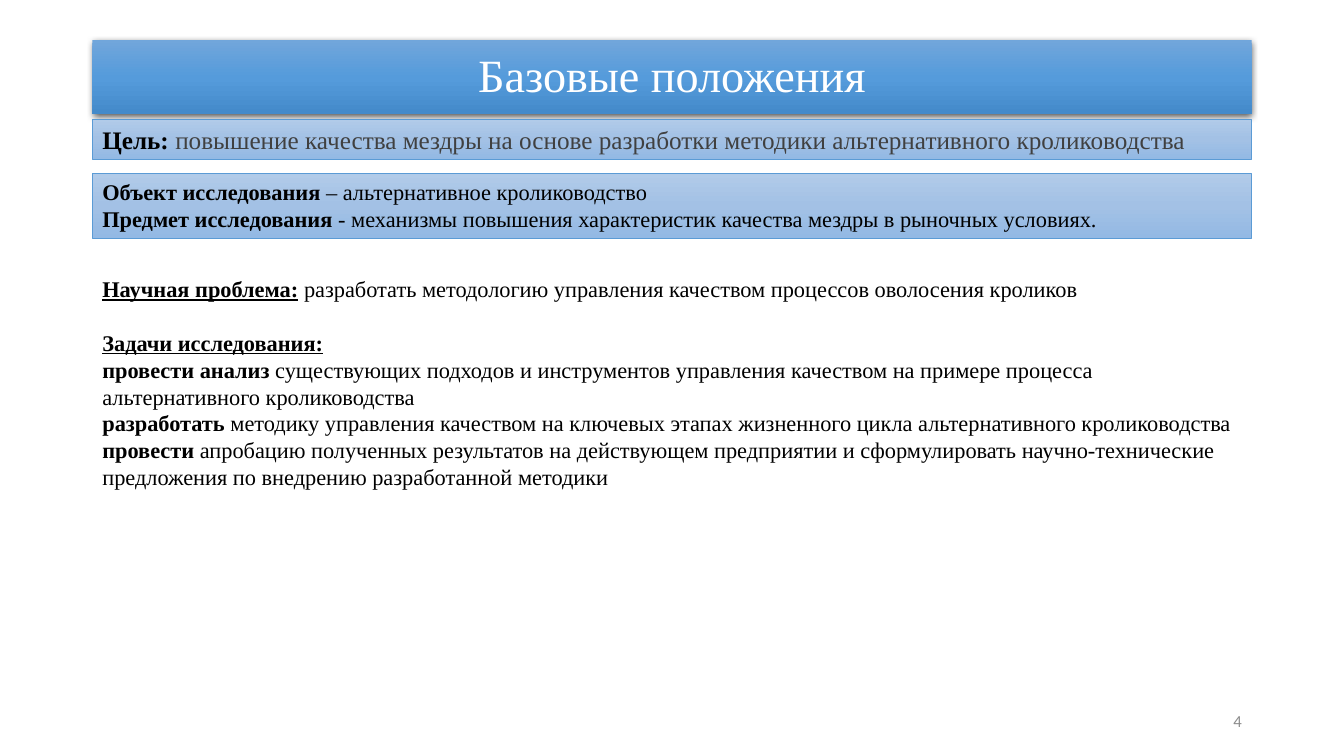
from lxml import etree
from pptx import Presentation
from pptx.dml.color import RGBColor
from pptx.enum.shapes import MSO_SHAPE
from pptx.enum.text import MSO_ANCHOR, MSO_AUTO_SIZE, PP_ALIGN
from pptx.oxml import parse_xml
from pptx.oxml.ns import qn
from pptx.util import Cm, Pt

RECT = MSO_SHAPE.RECTANGLE
TOP, MID = MSO_ANCHOR.TOP, MSO_ANCHOR.MIDDLE
GROW, FIXED = MSO_AUTO_SIZE.SHAPE_TO_FIT_TEXT, MSO_AUTO_SIZE.NONE
LEFT, RIGHT = PP_ALIGN.LEFT, PP_ALIGN.RIGHT
MIDDLE, JUST = PP_ALIGN.CENTER, PP_ALIGN.JUSTIFY

COLORS = {"black": "000000", "dark": "404040", "gray": "8C8C8C",
          "white": "FFFFFF", "line": "5B9BD5"}
PALE = ["B1CBE9", "A3C1E5", "93B9E4"]
DEEP = ["71A6DB", "559BDB", "448ACA"]
SERIF = "Times New Roman"
X, W = Cm(2.33), Cm(29.21)


def write(shape, paras, size=16, font=SERIF, color="black", anchor=TOP,
          auto=GROW, space=None):
    """Each paragraph is (align, gap before, runs); a run is (text, style, color)."""
    frame = shape.text_frame
    frame.word_wrap = True
    frame.auto_size = auto
    frame.vertical_anchor = anchor
    for i, (align, gap, runs) in enumerate(paras):
        para = frame.paragraphs[0] if i == 0 else frame.add_paragraph()
        para.alignment = align
        para.space_before = Pt(gap)
        para.line_spacing = space
        for text, style, *tint in runs:
            run = para.add_run()
            run.text = text
            run.font.name = font
            run.font.size = Pt(size)
            run.font.bold = "b" in style
            run.font.underline = "u" in style
            run.font.color.rgb = RGBColor.from_string(COLORS[tint[0] if tint else color])


def shade(shape, tones):
    """Fill from top to bottom with evenly spaced tones."""
    shape.fill.gradient()
    shape.fill.gradient_angle = 270
    stops = shape.element.spPr.find(".//" + qn("a:gsLst"))
    for stop in list(stops):
        stops.remove(stop)
    for i, tone in enumerate(tones):
        stop = etree.SubElement(stops, qn("a:gs"), pos=str(i * 50000))
        etree.SubElement(stop, qn("a:srgbClr"), val=tone)


deck = Presentation()
deck.slide_width, deck.slide_height = Cm(33.87), Cm(19.05)
slide = deck.slides.add_slide(deck.slide_layouts[5])

# Title bar with its shadow
title = slide.shapes.title
title.left, title.top, title.width, title.height = X, Cm(1.02), W, Cm(1.85)
shade(title, DEEP)
title.element.spPr.append(parse_xml(
    '<a:effectLst xmlns:a="http://schemas.openxmlformats.org/drawingml/2006/main">'
    '<a:outerShdw blurRad="57150" dist="19050" dir="5400000" algn="ctr" rotWithShape="0">'
    '<a:srgbClr val="000000"><a:alpha val="63000"/></a:srgbClr>'
    '</a:outerShdw></a:effectLst>'))
write(title, [(MIDDLE, 0, [("Базовые положения", "")])], size=33,
      color="white", anchor=MID, auto=FIXED, space=0.9)

# Goal, object and subject bars
goal = [(JUST, 0, [
    ("Цель: ", "b"),
    ("повышение качества мездры на основе разработки методики "
     "альтернативного кролиководства", "", "dark")])]
scope = [
    (JUST, 0, [("Объект исследования ", "b"),
               ("– альтернативное кролиководство", "")]),
    (JUST, 0, [("Предмет исследования ", "b"),
               ("- механизмы повышения характеристик качества мездры "
                "в рыночных условиях.", "")])]
for top, high, size, paras in [(3.0, 1.02, 18, goal), (4.37, 1.63, 16, scope)]:
    bar = slide.shapes.add_shape(RECT, X, Cm(top), W, Cm(high))
    bar.shadow.inherit = False
    shade(bar, PALE)
    bar.line.color.rgb = RGBColor.from_string(COLORS["line"])
    bar.line.width = Pt(0.5)
    write(bar, paras, size=size)

# Problem and tasks
tasks = [
    ("провести анализ", " существующих подходов и инструментов управления качеством "
     "на примере процесса альтернативного кролиководства"),
    ("разработать", " методику управления качеством на ключевых этапах жизненного "
     "цикла альтернативного кролиководства"),
    ("провести ", "апробацию полученных результатов на действующем предприятии и "
     "сформулировать научно-технические предложения по внедрению "
     "разработанной методики")]
body = slide.shapes.add_textbox(X, Cm(6.81), W, Cm(5.74))
write(body, [
    (JUST, 0, [("Научная проблема:", "bu"), (" ", "b"),
               ("разработать методологию управления качеством процессов "
                "оволосения кроликов", "")]),
    (JUST, 19.2, [("Задачи исследования:", "bu")]),
    *[(LEFT, 0, [(verb, "b"), (rest, "")]) for verb, rest in tasks]])

# Page number
page = slide.shapes.add_textbox(Cm(23.93), Cm(17.65), Cm(7.62), Cm(1.02))
write(page, [(RIGHT, 0, [("4", "")])], size=12, font="Calibri", color="gray",
      anchor=MID, auto=FIXED)

deck.save("out.pptx")
